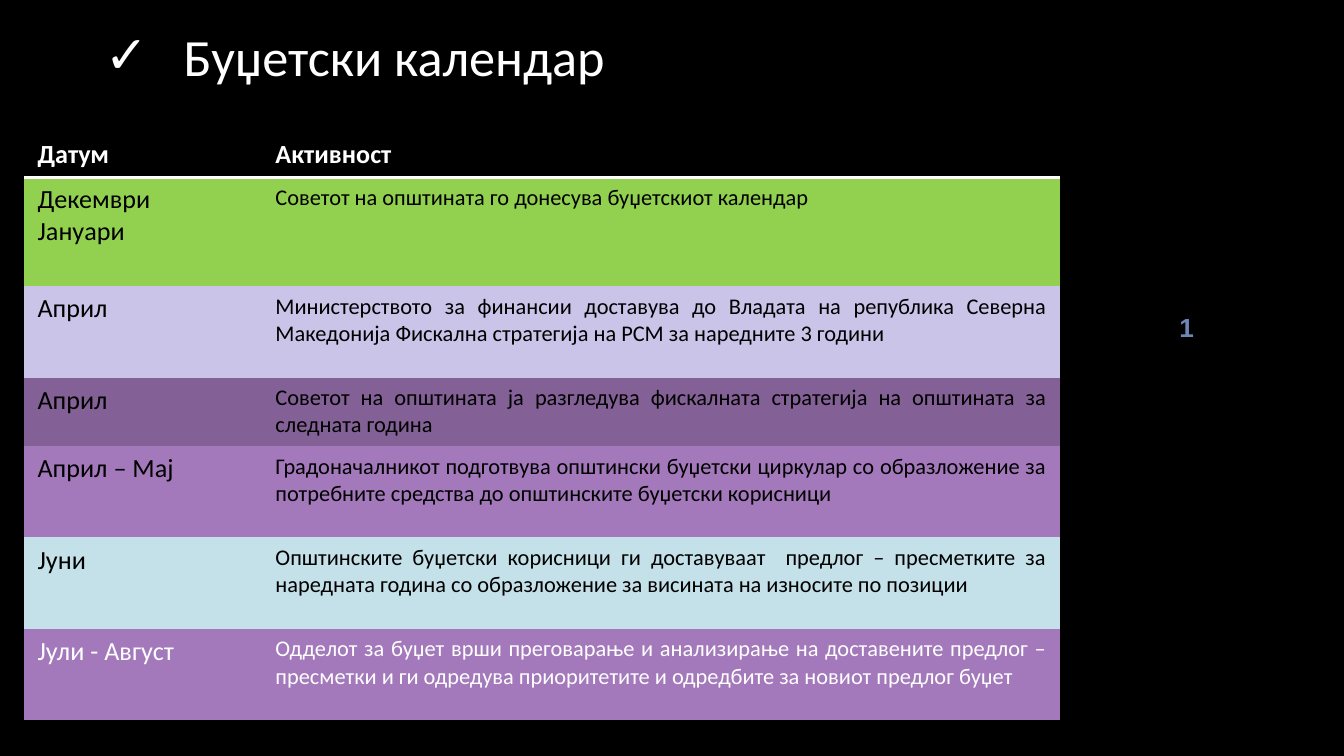
from lxml.etree import SubElement
from pptx import Presentation
from pptx.dml.color import RGBColor
from pptx.enum.text import MSO_ANCHOR, PP_ALIGN
from pptx.oxml import parse_xml
from pptx.oxml.ns import nsdecls, qn
from pptx.util import Inches, Pt

BLACK = RGBColor(0x00, 0x00, 0x00)
WHITE = RGBColor(0xFF, 0xFF, 0xFF)
BLUE = RGBColor(0x6E, 0x86, 0xB6)
GREEN = RGBColor(0x92, 0xD0, 0x50)
LAVENDER = RGBColor(0xCB, 0xC4, 0xE9)
PLUM = RGBColor(0x83, 0x61, 0x96)
PURPLE = RGBColor(0xA3, 0x79, 0xBB)
PALE_BLUE = RGBColor(0xC4, 0xE0, 0xE9)
NO_GRID_STYLE = "{2D5ABB26-0587-4C30-8999-92F81FD0307C}"

CALENDAR = [
    (0.34, BLACK, WHITE, "Датум", "Активност"),
    (0.81, GREEN, BLACK, "Декември\nЈануари",
     "Советот на општината го донесува буџетскиот календар"),
    (0.68, LAVENDER, BLACK, "Април",
     "Министерството за финансии доставува до Владата на република Северна "
     "Македонија Фискална стратегија на РСМ за наредните 3 години"),
    (0.51, PLUM, BLACK, "Април",
     "Советот на општината ја разгледува фискалната стратегија на општината "
     "за следната година"),
    (0.68, PURPLE, BLACK, "Април – Мај",
     "Градоначалникот подготвува општински буџетски циркулар со образложение "
     "за потребните средства до општинските буџетски корисници"),
    (0.68, PALE_BLUE, BLACK, "Јуни",
     "Општинските буџетски корисници ги доставуваат  предлог – пресметките за "
     "наредната година со образложение за висината на износите по позиции"),
    (0.68, PURPLE, WHITE, "Јули - Август",
     "Одделот за буџет врши преговарање и анализирање на доставените предлог – "
     "пресметки и ги одредува приоритетите и одредбите за новиот предлог буџет"),
]


def add_run(paragraph, text, size, color, font="Calibri", bold=False):
    run = paragraph.add_run()
    run.text = text
    run.font.name = font
    run.font.size = Pt(size)
    run.font.bold = bold
    run.font.color.rgb = color


presentation = Presentation()
presentation.slide_width = Inches(10)
presentation.slide_height = Inches(10) * 9 // 16
slide = presentation.slides.add_slide(presentation.slide_layouts[6])
slide.background.fill.solid()
slide.background.fill.fore_color.rgb = BLACK

number_box = slide.shapes.add_textbox(Inches(8.06), Inches(2.27), Inches(1.54), Inches(2.95))
number_box.text_frame.word_wrap = True
paragraph = number_box.text_frame.paragraphs[0]
paragraph.alignment = PP_ALIGN.CENTER
add_run(paragraph, "1", 14, BLUE, "Arial", True)

title_box = slide.shapes.add_textbox(Inches(0.68), Inches(0.08), Inches(8.41), Inches(0.67))
title_frame = title_box.text_frame
title_frame.word_wrap = True
title_frame.vertical_anchor = MSO_ANCHOR.BOTTOM
title_frame.margin_top = title_frame.margin_bottom = Inches(0.1)
paragraph = title_frame.paragraphs[0]
add_run(paragraph, " Буџетски календар", 28, WHITE)
properties = paragraph._p.get_or_add_pPr()
properties.set("marL", str(Inches(0.5)))
properties.set("indent", str(Inches(-0.5)))
bullet_color = SubElement(properties, qn("a:buClr"))
SubElement(bullet_color, qn("a:srgbClr"), val=str(WHITE))
SubElement(properties, qn("a:buFont"), typeface="Calibri")
SubElement(properties, qn("a:buChar"), char="✓")

table_height = sum(Inches(height) for height, *_ in CALENDAR)
table_frame = slide.shapes.add_table(
    len(CALENDAR), 2, Inches(0.18), Inches(0.98), Inches(7.71), table_height)
table = table_frame.table
table.horz_banding = False
table._tbl.tblPr.find(qn("a:tableStyleId")).text = NO_GRID_STYLE
table.columns[0].width = Inches(1.77)
table.columns[1].width = Inches(5.94)

for row, (height, fill, color, *texts) in enumerate(CALENDAR):
    table.rows[row].height = Inches(height)
    header = row == 0
    for column, text in enumerate(texts):
        cell = table.cell(row, column)
        cell.fill.solid()
        cell.fill.fore_color.rgb = fill
        activity = column == 1 and not header
        for index, line in enumerate(text.split("\n")):
            frame = cell.text_frame
            paragraph = frame.add_paragraph() if index else frame.paragraphs[0]
            paragraph.alignment = PP_ALIGN.JUSTIFY if activity else PP_ALIGN.LEFT
            add_run(paragraph, line, 12 if activity else 14, color, bold=header)
        if header:
            border = parse_xml(
                f'<a:lnB {nsdecls("a")} w="{Pt(2)}"><a:solidFill>'
                f'<a:srgbClr val="{WHITE}"/></a:solidFill></a:lnB>')
            cell._tc.get_or_add_tcPr().insert(0, border)

presentation.save("out.pptx")
